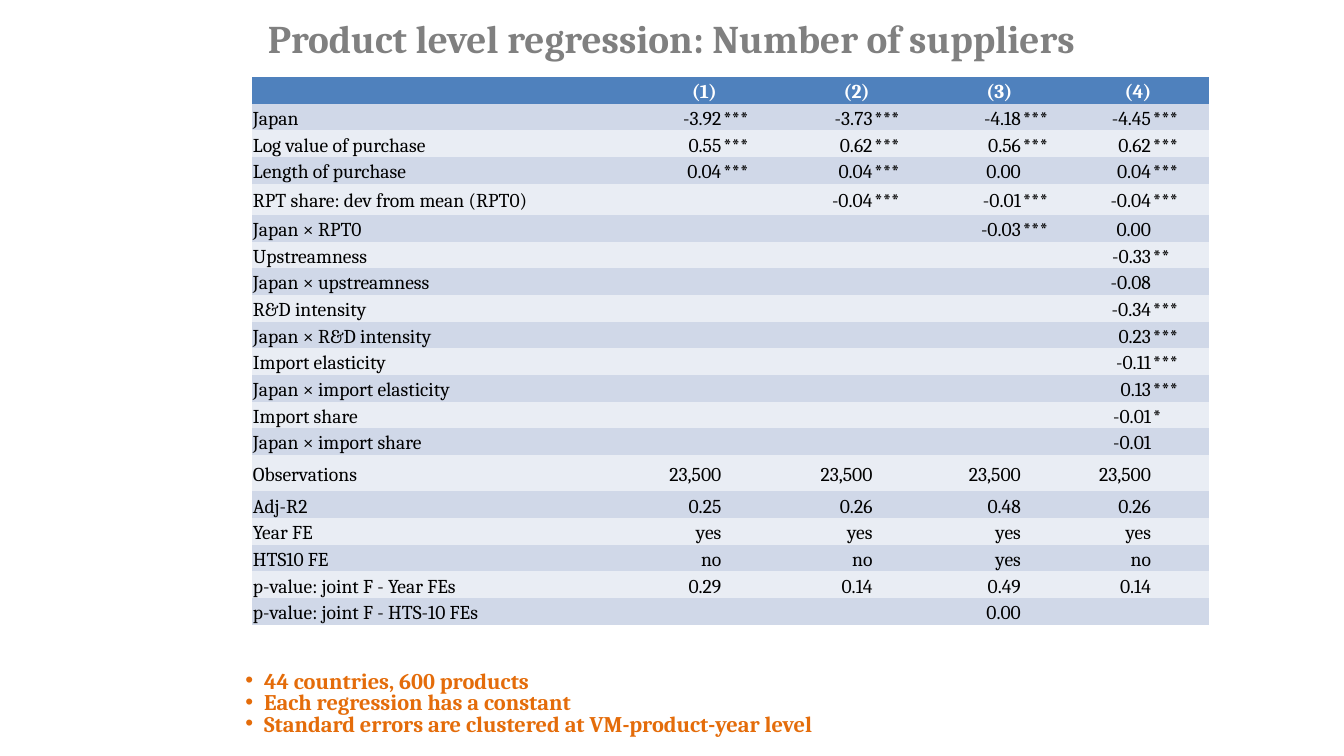
import pptx
import pptx.util
import pptx.dml.color
import pptx.enum.text
import pptx.oxml.ns
import lxml.etree

Pt = pptx.util.Pt
ALIGN = pptx.enum.text.PP_ALIGN
ANCHOR = pptx.enum.text.MSO_ANCHOR
FONT = "Cambria"
PLAIN = "{2D5ABB26-0587-4C30-8999-92F81FD0307C}"

WIDTHS = [240, 96, 42, 66, 42, 64, 32, 61, 41]
HEAD = ["(1)", "(2)", "(3)", "(4)"]
ROWS = [
    ["Japan", "-3.92***", "-3.73***", "-4.18***", "-4.45***"],
    ["Log value of purchase", "0.55***", "0.62***", "0.56***", "0.62***"],
    ["Length of purchase", "0.04***", "0.04***", "0.00", "0.04***"],
    ["RPT share: dev from mean (RPT0)", "", "-0.04***", "-0.01***", "-0.04***"],
    ["Japan × RPT0", "", "", "-0.03***", "0.00"],
    ["Upstreamness", "", "", "", "-0.33**"],
    ["Japan × upstreamness", "", "", "", "-0.08"],
    ["R&D intensity", "", "", "", "-0.34***"],
    ["Japan × R&D intensity", "", "", "", "0.23***"],
    ["Import elasticity", "", "", "", "-0.11***"],
    ["Japan × import elasticity", "", "", "", "0.13***"],
    ["Import share", "", "", "", "-0.01*"],
    ["Japan × import share", "", "", "", "-0.01"],
    ["Observations", "23,500", "23,500", "23,500", "23,500"],
    ["Adj-R2", "0.25", "0.26", "0.48", "0.26"],
    ["Year FE", "yes", "yes", "yes", "yes"],
    ["HTS10 FE", "no", "no", "yes", "no"],
    ["p-value: joint F - Year FEs", "0.29", "0.14", "0.49", "0.14"],
    ["p-value: joint F - HTS-10 FEs", "", "", "0.00", ""],
]
TALL = {4: 22.3, 14: 26}
NOTES = [
    "44 countries, 600 products",
    "Each regression has a constant",
    "Standard errors are clustered at VM-product-year level",
]


def paint(target, color):
    target.rgb = pptx.dml.color.RGBColor.from_string(color)


def add_run(para, text, size, color, bold=False):
    run = para.add_run()
    run.text = text
    run.font.name = FONT
    run.font.size = Pt(size)
    run.font.bold = bold
    paint(run.font.color, color)


def place(shape, box):
    shape.left, shape.top, shape.width, shape.height = map(Pt, box)
    shape.text_frame.auto_size = pptx.enum.text.MSO_AUTO_SIZE.NONE
    shape.text_frame.word_wrap = True


def add_title(slide, box, text):
    title = slide.shapes.title
    place(title, box)
    title.text_frame.vertical_anchor = ANCHOR.BOTTOM
    para = title.text_frame.paragraphs[0]
    para.alignment = ALIGN.CENTER
    para.line_spacing = 0.9
    add_run(para, text, 28, "808080", True)


def fill_cell(cell, text, back, align=ALIGN.LEFT, color="000000", bold=False):
    cell.fill.solid()
    paint(cell.fill.fore_color, back)
    cell.vertical_anchor = ANCHOR.MIDDLE
    cell.margin_left = cell.margin_right = cell.margin_top = Pt(0.7)
    cell.margin_bottom = 0
    para = cell.text_frame.paragraphs[0]
    para.alignment = align
    para.line_spacing = 1.14
    if text:
        add_run(para, text, 14, color, bold)
    else:
        # Keeps an empty cell from stretching its row.
        end = lxml.etree.SubElement(para._p, pptx.oxml.ns.qn("a:endParaRPr"))
        end.set("sz", "1400")


def split_stars(row):
    """Turn each value into a number cell and a cell for its stars."""
    cells = row[:1]
    for value in row[1:]:
        number = value.rstrip("*")
        cells += [number, value[len(number):]]
    return cells


def add_grid(slide, left, top):
    high = [TALL.get(r, 18) for r in range(len(ROWS) + 1)]
    frame = slide.shapes.add_table(len(high), len(WIDTHS), Pt(left), Pt(top),
                                   Pt(sum(WIDTHS)), Pt(sum(high)))
    table = frame.table
    table.horz_banding = False
    style = table._tbl.tblPr.find(pptx.oxml.ns.qn("a:tableStyleId"))
    style.text = PLAIN
    for col, width in zip(table.columns, WIDTHS):
        col.width = Pt(width)
    for row, height in zip(table.rows, high):
        row.height = Pt(height)

    head = [""]
    for label in HEAD:
        head += [label, ""]
    for c, text in enumerate(head):
        fill_cell(table.cell(0, c), text, "4F81BD", ALIGN.CENTER, "FFFFFF", True)
    for c in range(1, len(WIDTHS), 2):
        table.cell(0, c).merge(table.cell(0, c + 1))
    table.cell(0, 1).margin_left = Pt(29)

    for r, row in enumerate(ROWS, 1):
        back = "D0D8E8" if r % 2 else "E9EDF4"
        for c, text in enumerate(split_stars(row)):
            align = ALIGN.RIGHT if c % 2 else ALIGN.LEFT
            fill_cell(table.cell(r, c), text, back, align)


def add_notes(slide, box, lines):
    body = slide.placeholders[1]
    place(body, box)
    frame = body.text_frame
    for i, line in enumerate(lines):
        para = frame.add_paragraph() if i else frame.paragraphs[0]
        para.line_spacing = 0.8
        para.space_before = Pt(0)
        props = para._p.get_or_add_pPr()
        props.set("marL", str(Pt(13.5)))
        props.set("indent", str(Pt(-13.5)))
        mark = lxml.etree.SubElement(props, pptx.oxml.ns.qn("a:buChar"))
        mark.set("char", "•")
        add_run(para, line, 16, "E46C0A", True)


def main():
    deck = pptx.Presentation()
    deck.slide_width, deck.slide_height = Pt(960), Pt(540)
    slide = deck.slides.add_slide(deck.slide_layouts[1])
    add_title(slide, (169, 18, 621, 30),
              "Product level regression: Number of suppliers")
    add_notes(slide, (168, 476.5, 621, 57.5), NOTES)
    add_grid(slide, 180, 55)
    deck.save("out.pptx")


if __name__ == "__main__":
    main()
